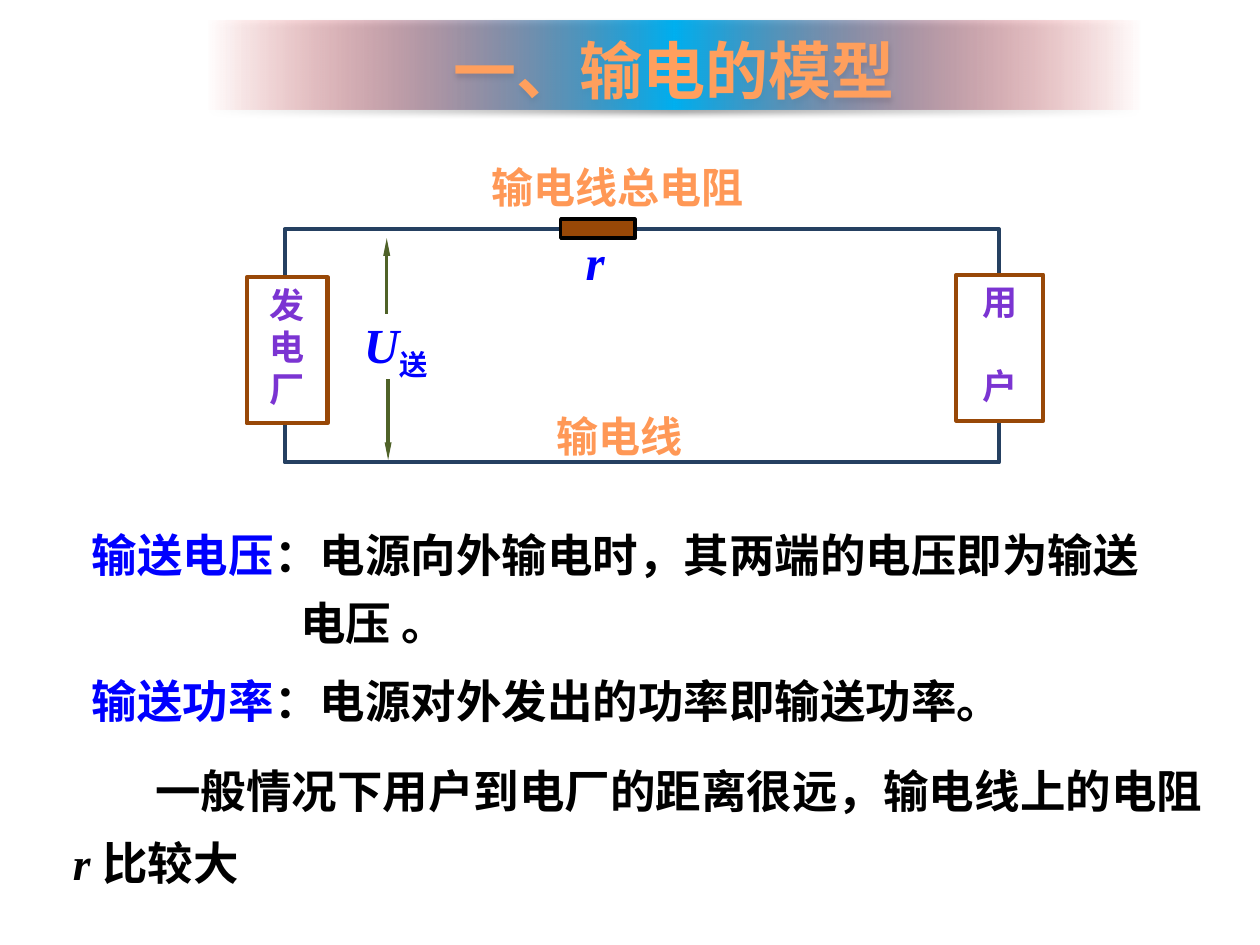
from lxml.etree import SubElement as Sub
from pptx import Presentation
from pptx.dml.color import RGBColor
from pptx.enum.shapes import MSO_CONNECTOR as Conn, MSO_SHAPE as Form
from pptx.enum.text import MSO_ANCHOR as Anchor, PP_ALIGN as Align
from pptx.oxml import parse_xml
from pptx.oxml.ns import nsdecls, qn
from pptx.util import Pt

SERIF = "Times New Roman"
SANS = "Noto Sans CJK SC"
BLUE, BLACK, ORANGE, VIOLET = "0000FF", "000000", "FF9856", "7B34D2"
BROWN, NAVY, GREEN = "984807", "254061", "4F6228"


def paint(color, code):
    color.rgb = RGBColor.from_string(code)


def add_run(par, text, size, code, slant=False, base=0, face=SERIF):
    run = par.add_run()
    run.text = text
    font = run.font
    font.name, font.size = face, Pt(size)
    font.bold, font.italic = True, slant
    font.fill.solid()
    paint(font.fill.fore_color, code)
    mark = run._r.get_or_add_rPr()
    mark.find(qn("a:latin")).addnext(
        parse_xml(f'<a:ea {nsdecls("a")} typeface="{SANS}"/>'))
    if base:
        mark.set("baseline", str(base * 1000))


def add_par(frame, pitch, align=Align.LEFT, first=False, above=0):
    par = frame.paragraphs[0] if first else frame.add_paragraph()
    par.alignment, par.line_spacing = align, Pt(pitch)
    par.space_before = Pt(above)
    return par


def indent(par, left=0, first=0):
    props = par._p.get_or_add_pPr()
    props.set("marL", str(Pt(left)))
    props.set("indent", str(Pt(first)))


def add_text(slide, place, anchor=Anchor.TOP):
    frame = slide.shapes.add_textbox(*map(Pt, place)).text_frame
    frame.word_wrap = True
    frame.vertical_anchor = anchor
    return frame


def add_label(slide, place, text, size, code, pitch, slant=False):
    par = add_par(add_text(slide, place), pitch, Align.JUSTIFY, True)
    add_run(par, text, size, code, slant)
    return par


def add_box(slide, place, fill=None, line=None, width=0):
    box = slide.shapes.add_shape(Form.RECTANGLE, *map(Pt, place))
    box.shadow.inherit = False
    if fill:
        box.fill.solid()
        paint(box.fill.fore_color, fill)
    else:
        box.fill.background()
    if line:
        paint(box.line.color, line)
        box.line.width = Pt(width)
    else:
        box.line.fill.background()
    box.text_frame.word_wrap = True
    return box


def add_site(slide, place, words, width, above=0):
    frame = add_box(slide, place, "FFFFFF", BROWN, width).text_frame
    frame.vertical_anchor = Anchor.TOP
    for i, word in enumerate(words):
        par = add_par(frame, 24, Align.CENTER, i == 0, above if i else 0)
        add_run(par, word, 20, VIOLET)


def add_arrow(slide, x, start, end):
    line = slide.shapes.add_connector(
        Conn.STRAIGHT, Pt(x), Pt(start), Pt(x), Pt(end))
    paint(line.line.color, GREEN)
    line.line.width = Pt(2)
    Sub(line.line._get_or_add_ln(), qn("a:tailEnd"),
        type="triangle", w="sm", len="lg")
    Sub(line._element.spPr, qn("a:effectLst"))


def add_title(slide):
    box = add_box(slide, (118.8, 11.5, 532.8, 51.1))
    props = box._element.spPr
    stops = "".join(
        f'<a:gs pos="{pos}000"><a:srgbClr val="{code}">'
        f'<a:alpha val="{alpha}000"/></a:srgbClr></a:gs>'
        for pos, code, alpha in
        ((0, "FF0000", 0), (50, "00B0F0", 100), (100, "FF0000", 0)))
    blend = parse_xml(f'<a:gradFill {nsdecls("a")}><a:gsLst>{stops}</a:gsLst>'
                      '<a:lin ang="0" scaled="0"/></a:gradFill>')
    props.replace(props.find(qn("a:noFill")), blend)
    shade = Sub(props.find(qn("a:effectLst")), qn("a:outerShdw"),
                blurRad=str(Pt(3.1)), dist=str(Pt(1.8)),
                dir="5400000", rotWithShape="0")
    Sub(Sub(shade, qn("a:srgbClr"), val=BLACK), qn("a:alpha"), val="35000")
    frame = box.text_frame
    frame.vertical_anchor = Anchor.MIDDLE
    par = add_par(frame, 48, Align.CENTER, True)
    add_run(par, "一、输电的模型", 36, "FF9F5D", face=SANS)


def add_circuit(slide):
    add_label(slide, (327.6, 128.2, 49.7, 49.7), "r", 28, BLUE, 34, True)
    add_label(slide, (311, 229, 92.2, 29.5), "输电线", 24, ORANGE, 31)
    add_label(slide, (273.6, 86.4, 170.6, 36), "输电线总电阻", 24, ORANGE, 31)
    add_box(slide, (162.7, 131, 408.2, 133.2), None, NAVY, 2.5)
    add_site(slide, (141.1, 158.4, 46.1, 83.5), "发电厂", 2.5)
    add_site(slide, (546.5, 157, 49.7, 83.5), "用户", 2.25, 24)
    add_box(slide, (320.4, 125.3, 42.5, 10.8), BROWN, BLACK, 2)
    par = add_label(slide, (200.9, 174.2, 72.7, 51.8), "U", 28, BLUE, 40, True)
    add_run(par, "送", 28, BLUE, base=-25)
    add_arrow(slide, 221.8, 216.7, 262.8)
    add_arrow(slide, 221, 179.3, 136.1)


def add_notes(slide):
    frame = add_text(slide, (45.4, 301.7, 617.8, 73.4))
    par = add_par(frame, 27, first=True)
    add_run(par, "输送电压", 26, BLUE)
    add_run(par, "：电源向外输电时，其两端的电压即为输送", 26, BLACK)
    par = add_par(frame, 26, above=13)
    indent(par, left=119)
    add_run(par, "电压 。", 26, BLACK)

    frame = add_text(slide, (45.4, 378, 542.2, 38.9), Anchor.MIDDLE)
    par = add_par(frame, 37, first=True)
    add_run(par, "输送功率", 26, BLUE)
    add_run(par, "：电源对外发出的功率即输送功率。", 26, BLACK)

    frame = add_text(slide, (34.6, 422.6, 666.7, 89.3))
    par = add_par(frame, 41, first=True)
    indent(par, first=47)
    add_run(par, "一般情况下用户到电厂的距离很远，输电线上的电阻 ", 26, BLACK)
    add_run(par, "r ", 26, BLACK, True)
    add_run(par, "比较大", 26, BLACK)


def main():
    deck = Presentation()
    deck.slide_width, deck.slide_height = Pt(720), Pt(540)
    slide = deck.slides.add_slide(deck.slide_layouts[6])
    add_circuit(slide)
    add_notes(slide)
    add_title(slide)
    deck.save("out.pptx")


if __name__ == "__main__":
    main()
